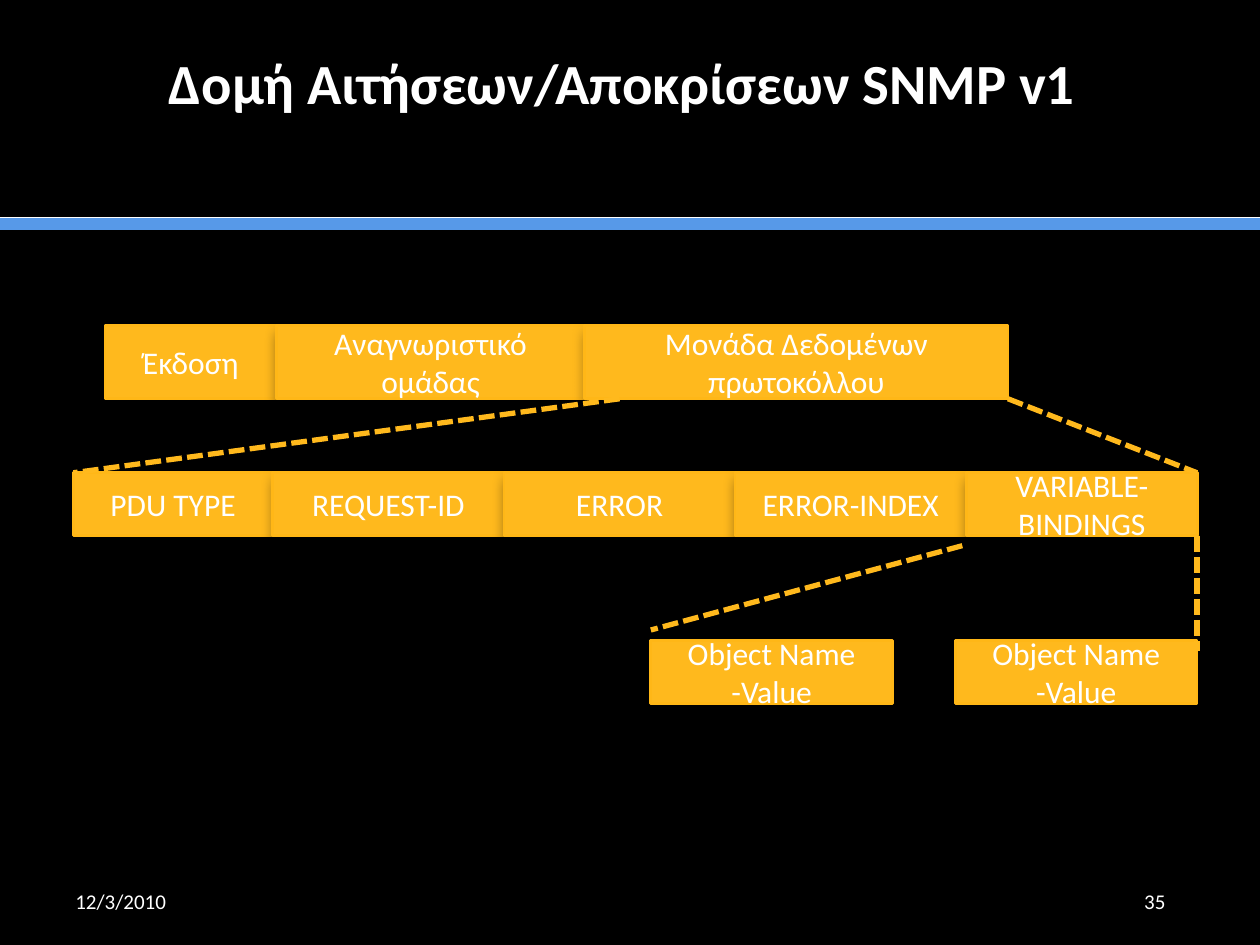
from lxml import etree
from pptx import Presentation
from pptx.dml.color import RGBColor as Rgb
from pptx.enum.dml import MSO_LINE as Dash
from pptx.enum.shapes import MSO_CONNECTOR as Conn, MSO_SHAPE as Shape
from pptx.enum.text import MSO_ANCHOR as Anchor, PP_ALIGN as Align
from pptx.oxml import parse_xml
from pptx.oxml.ns import nsdecls, qn
from pptx.util import Cm, Pt

COLORS = {"back": "000000", "text": "FFFFFF", "rule": "5799E8",
          "box": "FFB91D", "edge": "FFB717"}
SHADOW = (f'<a:effectLst {nsdecls("a")}>'
          '<a:outerShdw blurRad="101600" dist="63500" dir="4200000" rotWithShape="0">'
          '<a:srgbClr val="000000"><a:alpha val="50000"/></a:srgbClr>'
          '</a:outerShdw></a:effectLst>')


def color(name):
    return Rgb.from_string(COLORS[name])


def write(shape, text, size=18, align=Align.CENTER, bold=False):
    frame = shape.text_frame
    frame.word_wrap = True
    frame.vertical_anchor = Anchor.MIDDLE
    para = frame.paragraphs[0]
    para.alignment = align
    run = para.add_run()
    run.text = text
    font = run.font
    font.name, font.size, font.bold = "Calibri", Pt(size), bold
    font.color.rgb = color("text")


deck = Presentation()
deck.slide_width, deck.slide_height = Cm(25.4), Cm(19.05)
slide = deck.slides.add_slide(deck.slide_layouts[5])
slide.background.fill.solid()
slide.background.fill.fore_color.rgb = color("back")
shapes = slide.shapes

# Title, set high in its area
title = shapes.title
title.left, title.top = Cm(1.27), Cm(0.76)
title.width, title.height = Cm(22.86), Cm(3.18)
write(title, "Δομή Αιτήσεων/Αποκρίσεων SNMP v1", size=32.4, bold=True)
title.text_frame.margin_bottom = Cm(1.52)
title.text_frame.margin_right = Cm(0.57)

# Date and slide number
for text, left, width, align in [("12/3/2010", 1.27, 5.92, Align.LEFT),
                                 ("35", 22.43, 1.7, Align.CENTER)]:
    foot = shapes.add_textbox(Cm(left), Cm(17.65), Cm(width), Cm(1.02))
    write(foot, text, size=12, align=align)

# Message rows: left, top, height, gap, then each field with its width
rows = [
    (2.12, 6.56, 1.48, 0, [("Έκδοση", 3.45), ("Αναγνωριστικό ομάδας", 6.22),
                           ("Μονάδα Δεδομένων πρωτοκόλλου", 8.53)]),
    (1.48, 9.53, 1.27, 0, [("PDU TYPE", 4.02), ("REQUEST-ID", 4.66),
                           ("ERROR", 4.66), ("ERROR-INDEX", 4.66),
                           ("VARIABLE- BINDINGS", 4.66)]),
    (13.12, 12.91, 1.27, 1.27, [("Object Name -Value", 4.87)] * 2),
]
for left, top, height, gap, fields in rows:
    for text, width in fields:
        box = shapes.add_shape(Shape.RECTANGLE, Cm(left), Cm(top),
                               Cm(width), Cm(height))
        box.fill.solid()
        box.fill.fore_color.rgb = color("box")
        box.line.color.rgb = color("edge")
        box.line.width = Pt(1.5)
        box._element.spPr.append(parse_xml(SHADOW))
        write(box, text)
        left += width + gap

# Rules under the title, then dashed lines that expand a field into its parts
lines = [
    (0, 4.52, 25.4, 4.52, "rule", 7, None),
    (0, 4.39, 25.4, 4.39, "text", 0.5, None),
    (12.49, 8.04, 1.48, 9.53, "box", 3, Dash.SQUARE_DOT),
    (20.32, 8.04, 24.13, 9.53, "box", 3, Dash.SQUARE_DOT),
    (19.4, 11, 13.12, 12.7, "box", 3, Dash.SQUARE_DOT),
    (24.13, 10.8, 24.13, 13.12, "box", 3, Dash.SQUARE_DOT),
]
for x1, y1, x2, y2, name, width, dash in lines:
    line = shapes.add_connector(Conn.STRAIGHT, Cm(x1), Cm(y1), Cm(x2), Cm(y2))
    line.line.color.rgb = color(name)
    line.line.width = Pt(width)
    if dash:
        line.line.dash_style = dash
    etree.SubElement(line._element.spPr, qn("a:effectLst"))

deck.save("out.pptx")
